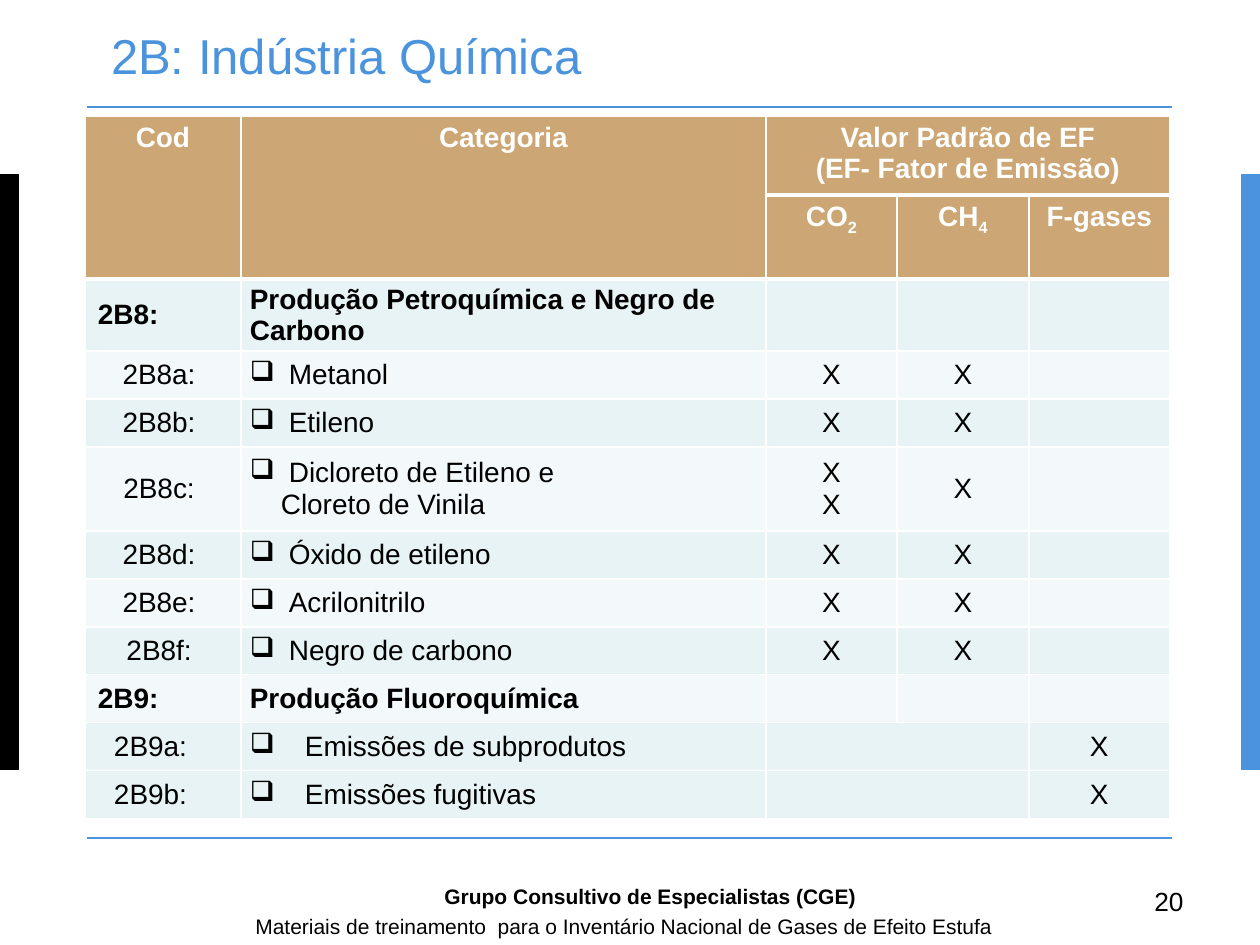
from dataclasses import dataclass

from lxml import etree
from pptx import Presentation
from pptx.dml.color import RGBColor
from pptx.enum import shapes, text
from pptx.oxml import ns
from pptx.util import Pt

SCALE = 914400 / 126  # EMU per px
LEFT, CENTER = text.PP_ALIGN.LEFT, text.PP_ALIGN.CENTER


@dataclass(frozen=True)
class Theme:
    font: str = "Arial"
    blue: str = "4B93DC"
    black: str = "000000"
    white: str = "FFFFFF"
    header: str = "CCA674"
    bands: tuple = ("E7F3F4", "F3F9FA")
    title_size: int = 28
    table_size: int = 16
    number_size: int = 15
    footer_size: int = 12


THEME = Theme()
COLUMNS = [156, 525, 131, 132, 141]
ROWS = [79, 84, 72, 48, 48, 84, 48, 48, 48, 48, 48, 48]
HEADER_ROWS = 2

# Code, category, CO2, CH4, F-gases
GROUPS = [
    ("2B8:", "Produção Petroquímica e Negro de Carbono", "", "", ""),
    ("2B8a: ", "Metanol", "X", "X", ""),
    ("2B8b: ", "Etileno", "X", "X", ""),
    ("2B8c: ", "Dicloreto de Etileno e\nCloreto de Vinila", "X\nX", "X", ""),
    ("2B8d: ", "Óxido de etileno", "X", "X", ""),
    ("2B8e: ", "Acrilonitrilo", "X", "X", ""),
    ("2B8f: ", "Negro de carbono", "X", "X", ""),
    ("2B9:", "Produção Fluoroquímica", "", "", ""),
    ("2B9a:", "Emissões de subprodutos", "", "", "X"),
    ("2B9b:", "Emissões fugitivas", "", "", "X"),
]


def px(value):
    return round(value * SCALE)


def color(code):
    return RGBColor.from_string(code)


def style(frame, size, code, bold=False, align=LEFT):
    for para in frame.paragraphs:
        para.alignment = align
        for span in para.runs:
            font = span.font
            font.name, font.size, font.bold = THEME.font, Pt(size), bold
            font.color.rgb = color(code)


def indent(para, left, bullet=None):
    props = para._p.get_or_add_pPr()
    props.set("marL", str(px(left)))
    props.set("indent", str(px(-left) if bullet else 0))
    if bullet:
        etree.SubElement(props, ns.qn("a:buChar")).set("char", bullet)


def add_bar(page, left, code):
    bar = page.shapes.add_shape(
        shapes.MSO_SHAPE.RECTANGLE, px(left), px(174), px(19), px(596))
    bar.shadow.inherit = False
    bar.fill.solid()
    bar.fill.fore_color.rgb = color(code)
    bar.line.fill.background()


def add_rule(page, top):
    rule = page.shapes.add_connector(
        shapes.MSO_CONNECTOR.STRAIGHT, px(87), px(top), px(1172), px(top))
    rule.line.color.rgb = color(THEME.blue)
    rule.line.width = Pt(1)
    etree.SubElement(rule._element.spPr, ns.qn("a:effectLst"))


def set_title(page, words):
    title = page.shapes.title
    title.left, title.top, title.width, title.height = map(px, (111, 37, 1091, 69))
    frame = title.text_frame
    frame.text = words
    frame.margin_left = frame.margin_right = frame.margin_top = frame.margin_bottom = 0
    frame.vertical_anchor = text.MSO_ANCHOR.MIDDLE
    frame.paragraphs[0].line_spacing = Pt(15)
    style(frame, THEME.title_size, THEME.blue)


def add_label(page, words, area, size, bold=False):
    frame = page.shapes.add_textbox(*map(px, area)).text_frame
    frame.word_wrap = True
    frame.text = words
    style(frame, size, THEME.black, bold)


def set_borders(cell, top, bottom):
    props = cell._tc.get_or_add_tcPr()
    for place, (side, width) in enumerate(zip("LRTB", (1, 1, top, bottom))):
        line = etree.Element(ns.qn(f"a:ln{side}"), w=str(Pt(width)))
        fill = etree.SubElement(line, ns.qn("a:solidFill"))
        etree.SubElement(fill, ns.qn("a:srgbClr"), val=THEME.white)
        props.insert(place, line)


def paint_cell(cell, code, top=1, bottom=1):
    cell.fill.solid()
    cell.fill.fore_color.rgb = color(code)
    set_borders(cell, top, bottom)


def fill_cell(cell, words, tight=False, **look):
    cell.vertical_anchor = text.MSO_ANCHOR.MIDDLE
    cell.margin_left = cell.margin_right = px(9 if tight else 13)
    cell.margin_top = cell.margin_bottom = px(6 if words and not tight else 0)
    cell.text_frame.text = words
    style(cell.text_frame, THEME.table_size, **look)


def fill_header(table):
    for row in range(HEADER_ROWS):
        for column in range(len(COLUMNS)):
            paint_cell(table.cell(row, column), THEME.header, 3 if row else 1, 3)
    for column in (0, 1):
        table.cell(0, column).merge(table.cell(1, column))
    table.cell(0, 2).merge(table.cell(0, 4))

    headings = [
        (0, 0, "Cod", ""), (0, 1, "Categoria", ""),
        (0, 2, "Valor Padrão de EF\n(EF- Fator de Emissão)", ""),
        (1, 2, "CO", "2"), (1, 3, "CH", "4"), (1, 4, "F-gases", ""),
    ]
    for row, column, words, subscript in headings:
        cell = table.cell(row, column)
        fill_cell(cell, words, code=THEME.white, bold=True, align=CENTER)
        cell.vertical_anchor = text.MSO_ANCHOR.TOP
        if subscript:
            span = cell.text_frame.paragraphs[0].add_run()
            span.text = subscript
            style(cell.text_frame, THEME.table_size, THEME.white, True, CENTER)
            span._r.get_or_add_rPr().set("baseline", "-25000")


def fill_body(table):
    last = len(GROUPS) - 1
    for index, (code, category, *marks) in enumerate(GROUPS):
        row = index + HEADER_ROWS
        cells = [table.cell(row, column) for column in range(len(COLUMNS))]
        band = THEME.bands[index % 2 if index < last else 0]
        for cell in cells:
            paint_cell(cell, band, 1 if index else 3)

        is_group = len(code) == 4
        is_fluoro = code.startswith("2B9") and not is_group
        fill_cell(cells[0], code, code=THEME.black, bold=is_group,
                  align=LEFT if is_group or is_fluoro else CENTER)
        fill_cell(cells[1], category, tight=True, code=THEME.black, bold=is_group)
        for column, mark in enumerate(marks):
            fill_cell(cells[column + 2], mark, tight=column == 1,
                      code=THEME.black, align=CENTER)

        if is_fluoro:
            indent(cells[0].text_frame.paragraphs[0], 16)
            cells[2].merge(cells[3])
        if not is_group:
            first, *others = cells[1].text_frame.paragraphs
            indent(first, 55 if is_fluoro else 39, "❑")
            for para in others:
                indent(para, 31)


def add_factor_table(page):
    table = page.shapes.add_table(
        len(ROWS), len(COLUMNS), px(85), px(116), px(sum(COLUMNS)), px(sum(ROWS))).table
    table.first_row = table.horz_banding = False
    for column, width in zip(table.columns, COLUMNS):
        column.width = px(width)
    for row, height in zip(table.rows, ROWS):
        row.height = px(height)
    fill_header(table)
    fill_body(table)


def main():
    deck = Presentation()
    deck.slide_width, deck.slide_height = px(1260), px(945)
    page = deck.slides.add_slide(deck.slide_layouts[5])

    # Frame: side bars and rules
    add_bar(page, 0, THEME.black)
    add_bar(page, 1241, THEME.blue)
    for top in (107, 838):
        add_rule(page, top)

    # Content
    set_title(page, "2B: Indústria Química")
    add_factor_table(page)

    # Footer
    add_label(page, "20", (1142, 879, 59, 44), THEME.number_size)
    add_label(page, "Materiais de treinamento  para o Inventário Nacional de Gases de Efeito Estufa",
              (243, 907, 871, 35), THEME.footer_size)
    add_label(page, "Grupo Consultivo de Especialistas (CGE)",
              (432, 877, 446, 34), THEME.footer_size, bold=True)
    deck.save("out.pptx")


if __name__ == "__main__":
    main()
